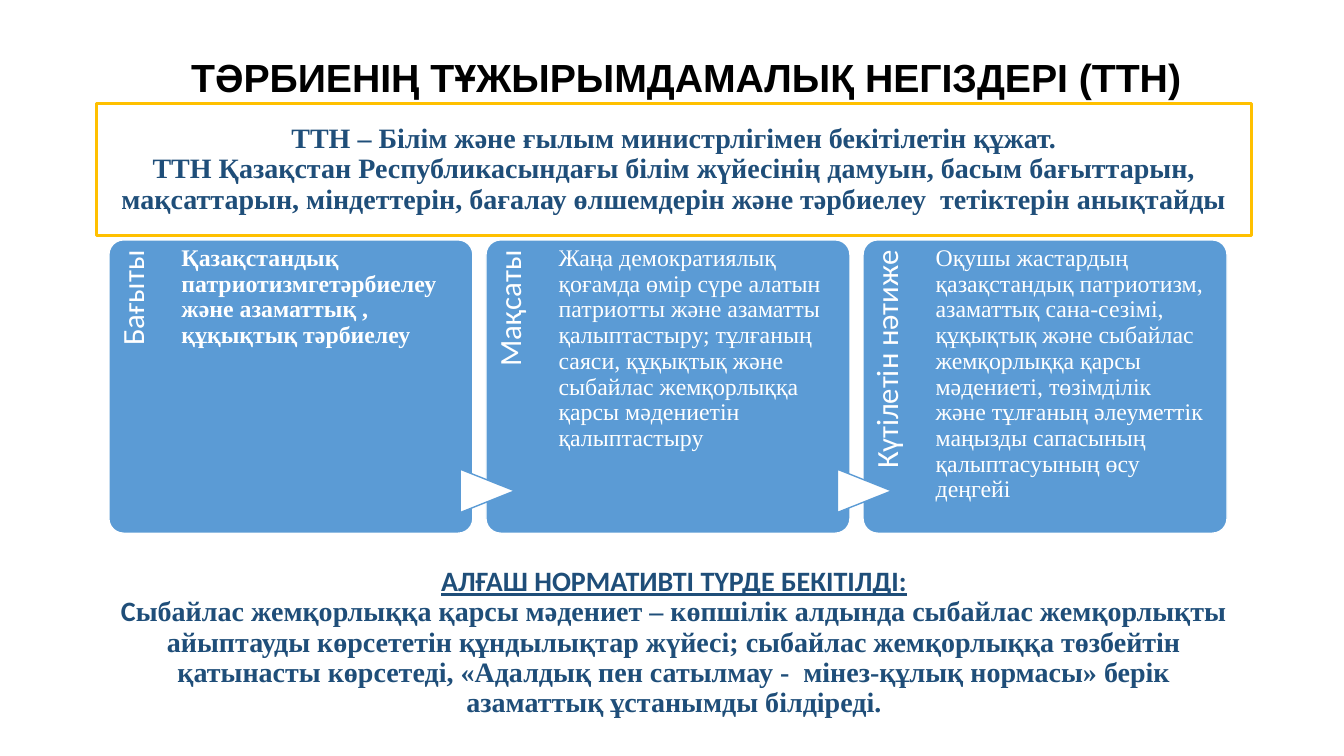
from dataclasses import dataclass

from pptx import Presentation
from pptx.dml.color import RGBColor
from pptx.enum.shapes import MSO_SHAPE
from pptx.enum.text import MSO_ANCHOR, PP_ALIGN
from pptx.util import Inches, Pt

ROUNDED = MSO_SHAPE.ROUNDED_RECTANGLE
RECTANGLE = MSO_SHAPE.RECTANGLE
TRIANGLE = MSO_SHAPE.FLOWCHART_EXTRACT
LEFT, CENTER, RIGHT = PP_ALIGN.LEFT, PP_ALIGN.CENTER, PP_ALIGN.RIGHT
TOP, MIDDLE = MSO_ANCHOR.TOP, MSO_ANCHOR.MIDDLE

WHITE, BLACK, BLUE, NAVY, GOLD = "FFFFFF", "000000", "5B9BD5", "1F4E79", "FFC000"
SERIF = "Times New Roman"
CARD_LEFT, CARD_TOP, CARD_PITCH = 1.08, 2.38, 3.74
CARD_WIDTH, CARD_HEIGHT = 3.61, 2.91


@dataclass
class Box:
    left: float
    top: float
    width: float
    height: float

    def inches(self) -> list:
        return [Inches(v) for v in (self.left, self.top, self.width, self.height)]


@dataclass
class TextStyle:
    size: int
    font: str
    color: str
    bold: bool = False
    align: PP_ALIGN = LEFT


@dataclass
class Card:
    label: str
    body: str
    bold: bool = False


CARDS = [
    Card("Бағыты", "Қазақстандық патриотизмгетәрбиелеу және азаматтық , құқықтық тәрбиелеу", True),
    Card("Мақсаты", "Жаңа демократиялық қоғамда өмір сүре алатын патриотты және азаматты "
         "қалыптастыру; тұлғаның саяси, құқықтық және сыбайлас жемқорлыққа қарсы "
         "мәдениетін қалыптастыру"),
    Card("Күтілетін нәтиже", "Оқушы жастардың қазақстандық патриотизм, азаматтық сана-сезімі, "
         "құқықтық және сыбайлас жемқорлыққа қарсы мәдениеті, төзімділік және тұлғаның "
         "әлеуметтік маңызды сапасының қалыптасуының өсу деңгейі"),
]
DEFINITION = [
    "ТТН – Білім және ғылым министрлігімен бекітілетін құжат.",
    "ТТН Қазақстан Республикасындағы білім жүйесінің дамуын, басым бағыттарын, мақсаттарын, "
    "міндеттерін, бағалау өлшемдерін және тәрбиелеу  тетіктерін анықтайды",
]
APPROVED = "АЛҒАШ НОРМАТИВТІ ТҮРДЕ БЕКІТІЛДІ:"
CULTURE = ("ыбайлас жемқорлыққа қарсы мәдениет – көпшілік алдында сыбайлас жемқорлықты айыптауды "
           "көрсететін құндылықтар жүйесі; сыбайлас жемқорлыққа төзбейтін қатынасты көрсетеді, "
           "«Адалдық пен сатылмау -  мінез-құлық нормасы» берік азаматтық ұстанымды білдіреді.")


def rgb(color: str) -> RGBColor:
    return RGBColor.from_string(color)


def write(shape, lines: list[str], style: TextStyle, anchor=TOP, insets=(0.1, 0.05, 0.1, 0.05)) -> None:
    frame = shape.text_frame
    frame.word_wrap = True
    frame.vertical_anchor = anchor
    (frame.margin_left, frame.margin_top,
     frame.margin_right, frame.margin_bottom) = [Inches(inset) for inset in insets]
    frame.text = "\n".join(lines)
    for paragraph in frame.paragraphs:
        paragraph.alignment = style.align
        paragraph.line_spacing = 0.9
        paragraph.space_before = paragraph.space_after = Pt(0)
        font = paragraph.font
        font.size, font.name, font.bold = Pt(style.size), style.font, style.bold
        font.color.rgb = rgb(style.color)


def add_shape(slide, kind, box: Box, fill: str | None, line: str, line_width: float):
    shape = slide.shapes.add_shape(kind, *box.inches())
    shape.shadow.inherit = False
    if fill:
        shape.fill.solid()
        shape.fill.fore_color.rgb = rgb(fill)
    else:
        shape.fill.background()
    shape.line.color.rgb = rgb(line)
    shape.line.width = Pt(line_width)
    return shape


def add_card(slide, index: int, card: Card) -> None:
    left = CARD_LEFT + index * CARD_PITCH
    panel = add_shape(slide, ROUNDED, Box(left, CARD_TOP, CARD_WIDTH, CARD_HEIGHT), BLUE, WHITE, 1)
    panel.adjustments[0] = 0.05

    label = slide.shapes.add_textbox(*Box(left - 0.83, 3.21, 2.39, 0.72).inches())
    label.rotation = 270
    write(label, [card.label], TextStyle(22, "Calibri", WHITE, align=RIGHT),
          insets=(0, 0.08, 0.11, 0))

    # Arrow from the previous card
    if index > 0:
        arrow = add_shape(slide, TRIANGLE, Box(left - 0.2, 4.6, 0.43, 0.54), WHITE, BLUE, 1)
        arrow.rotation = 90

    body = slide.shapes.add_textbox(*Box(left + 0.72, CARD_TOP, 2.69, CARD_HEIGHT).inches())
    write(body, [card.body], TextStyle(17, SERIF, WHITE, card.bold), insets=(0, 0.06, 0, 0))


def main() -> None:
    presentation = Presentation()
    presentation.slide_width, presentation.slide_height = Inches(13.33), Inches(7.5)
    slide = presentation.slides.add_slide(presentation.slide_layouts[5])

    # Title
    title = slide.shapes.title
    title.left, title.top, title.width, title.height = Box(1.12, 0.43, 11.37, 0.73).inches()
    write(title, ["ТӘРБИЕНІҢ ТҰЖЫРЫМДАМАЛЫҚ НЕГІЗДЕРІ (ТТН)"],
          TextStyle(28, "Arial", BLACK, True, CENTER), MIDDLE)

    # Closing statement
    statement_style = TextStyle(20, SERIF, NAVY, True, CENTER)
    closing = slide.shapes.add_textbox(*Box(0.96, 5.71, 11.45, 1.34).inches())
    write(closing, [APPROVED, ""], statement_style, MIDDLE)
    heading, statement = closing.text_frame.paragraphs
    heading.font.name = "Calibri"
    heading.font.underline = True
    initial = statement.add_run()
    initial.text = "С"
    initial.font.name = "Calibri"
    statement.add_run().text = CULTURE

    # Cards
    for index, card in enumerate(CARDS):
        add_card(slide, index, card)

    # Framed definition
    frame = add_shape(slide, RECTANGLE, Box(0.96, 1.03, 11.45, 1.31), None, GOLD, 2)
    write(frame, DEFINITION, statement_style, MIDDLE)

    presentation.save("out.pptx")


if __name__ == "__main__":
    main()
